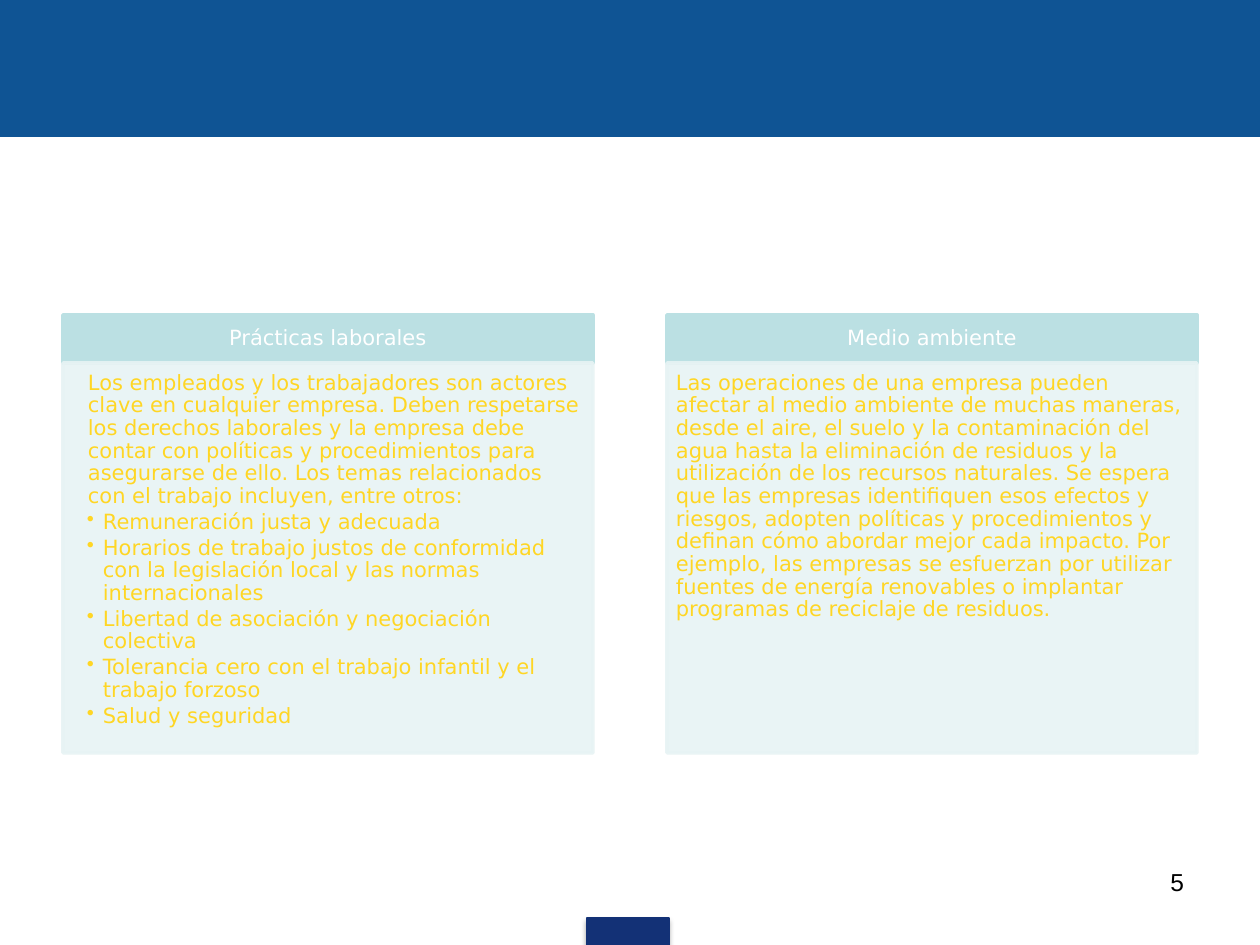
from lxml.etree import SubElement
from pptx import Presentation
from pptx.dml.color import RGBColor
from pptx.enum.shapes import MSO_SHAPE
from pptx.enum.text import MSO_ANCHOR, PP_ALIGN
from pptx.oxml.ns import qn
from pptx.util import Emu, Pt

WIDTH, HEIGHT = 1260, 945
COLUMN_LEFTS = (63, 667)
COLUMN_WIDTH = 530
HEADER_TOP, HEADER_HEIGHT, BODY_HEIGHT = 315, 48, 390
BULLET_LEFT, BULLET_HANG = 31, 16

LABOUR_INTRO = (
    "Los empleados y los trabajadores son actores clave en cualquier empresa. "
    "Deben respetarse los derechos laborales y la empresa debe contar con "
    "políticas y procedimientos para asegurarse de ello. Los temas relacionados "
    "con el trabajo incluyen, entre otros:"
)
LABOUR_TOPICS = (
    "Remuneración justa y adecuada",
    "Horarios de trabajo justos de conformidad con la legislación local y las "
    "normas internacionales",
    "Libertad de asociación y negociación colectiva",
    "Tolerancia cero con el trabajo infantil y el trabajo forzoso",
    "Salud y seguridad",
)
ENVIRONMENT_TEXT = (
    "Las operaciones de una empresa pueden afectar al medio ambiente de muchas "
    "maneras, desde el aire, el suelo y la contaminación del agua hasta la "
    "eliminación de residuos y la utilización de los recursos naturales. Se "
    "espera que las empresas identifiquen esos efectos y riesgos, adopten "
    "políticas y procedimientos y definan cómo abordar mejor cada impacto. Por "
    "ejemplo, las empresas se esfuerzan por utilizar fuentes de energía "
    "renovables o implantar programas de reciclaje de residuos."
)


def px(length):
    return Emu(round(length * 914400 / 126))


def color(value):
    return RGBColor.from_string(value)


def set_opacity(color_format_parent, percent):
    """Add an alpha value to the solid colour found inside an XML element."""
    tint = color_format_parent.find(qn("a:solidFill"))[0]
    SubElement(tint, qn("a:alpha"), val=str(percent * 1000))


class SlideBuilder:
    """Holds the style and the slide being drawn."""

    font = "DejaVu Sans"
    size = 12
    line_spacing = 0.9
    space_after = 1.8
    band_fill = "0F5494"
    tab_fill = "133176"
    header_fill, header_text = "BBE0E3", "FFFFFF"
    body_fill, body_text = "E7F3F4", "FFD624"

    def __init__(self, page):
        self.page = page

    def rectangle(self, left, top, width, height, fill, line_width=0.75, opacity=100):
        box = self.page.shapes.add_shape(
            MSO_SHAPE.RECTANGLE, px(left), px(top), px(width), px(height))
        box.shadow.inherit = False
        box.fill.solid()
        box.fill.fore_color.rgb = color(fill)
        box.line.color.rgb = color(fill)
        box.line.width = Pt(line_width)
        if opacity < 100:
            properties = box.fill._xPr
            set_opacity(properties, opacity)
            set_opacity(properties.find(qn("a:ln")), opacity)
        return box

    def soft_shadow(self, box):
        effects = box._element.spPr.find(qn("a:effectLst"))
        shadow = SubElement(
            effects, qn("a:outerShdw"), blurRad=str(Pt(3.1)), dist=str(Pt(1.8)),
            dir="5400000", algn="ctr", rotWithShape="0")
        tint = SubElement(shadow, qn("a:srgbClr"), val="000000")
        SubElement(tint, qn("a:alpha"), val="35000")

    def frame(self, box, margins, anchor=MSO_ANCHOR.TOP):
        """Set wrapping, anchor and left, top, right, bottom margins."""
        frame = box.text_frame
        frame.word_wrap = True
        frame.vertical_anchor = anchor
        (frame.margin_left, frame.margin_top,
         frame.margin_right, frame.margin_bottom) = map(px, margins)
        return frame

    def style(self, para, text, fill, align=PP_ALIGN.LEFT, font=None, size=None):
        para.text = text
        para.alignment = align
        para.font.name = font or self.font
        para.font.size = Pt(size or self.size)
        para.font.color.rgb = color(fill)

    def header(self, left, text):
        box = self.rectangle(left, HEADER_TOP, COLUMN_WIDTH, HEADER_HEIGHT,
                             self.header_fill, line_width=2)
        frame = self.frame(box, (11, 6, 11, 6), MSO_ANCHOR.MIDDLE)
        para = frame.paragraphs[0]
        para.line_spacing = self.line_spacing
        self.style(para, text, self.header_text, PP_ALIGN.CENTER)

    def body(self, left, intro, topics, indent):
        box = self.rectangle(left, HEADER_TOP + HEADER_HEIGHT, COLUMN_WIDTH,
                             BODY_HEIGHT, self.body_fill, line_width=2, opacity=90)
        frame = self.frame(box, (9, 9, 11, 12))
        for index, text in enumerate((intro, *topics)):
            para = frame.add_paragraph() if index else frame.paragraphs[0]
            para.line_spacing = self.line_spacing
            para.space_after = Pt(self.space_after)
            properties = para._p.get_or_add_pPr()
            if index:
                properties.set("marL", str(px(BULLET_LEFT)))
                properties.set("indent", str(px(-BULLET_HANG)))
                SubElement(properties, qn("a:buChar"), char="•")
            else:
                properties.set("marL", str(px(indent)))
            self.style(para, text, self.body_text)

    def page_number(self, number):
        box = self.page.shapes.add_textbox(px(903), px(861), px(294), px(66))
        para = self.frame(box, (13, 6, 13, 6)).paragraphs[0]
        self.style(para, number, "000000", PP_ALIGN.RIGHT, font="Arial", size=14)


def main():
    deck = Presentation()
    deck.slide_width, deck.slide_height = px(WIDTH), px(HEIGHT)
    builder = SlideBuilder(deck.slides.add_slide(deck.slide_layouts[6]))

    builder.rectangle(0, 0, WIDTH, 136, builder.band_fill)
    bottom_tab = builder.rectangle(587, 918, 82, 27, builder.tab_fill)
    builder.soft_shadow(bottom_tab)

    columns = (
        ("Prácticas laborales", LABOUR_INTRO, LABOUR_TOPICS, BULLET_HANG),
        ("Medio ambiente", ENVIRONMENT_TEXT, (), 0),
    )
    for left, (heading, intro, topics, indent) in zip(COLUMN_LEFTS, columns):
        builder.header(left, heading)
        builder.body(left, intro, topics, indent)

    builder.page_number("5")
    deck.save("out.pptx")


if __name__ == "__main__":
    main()
